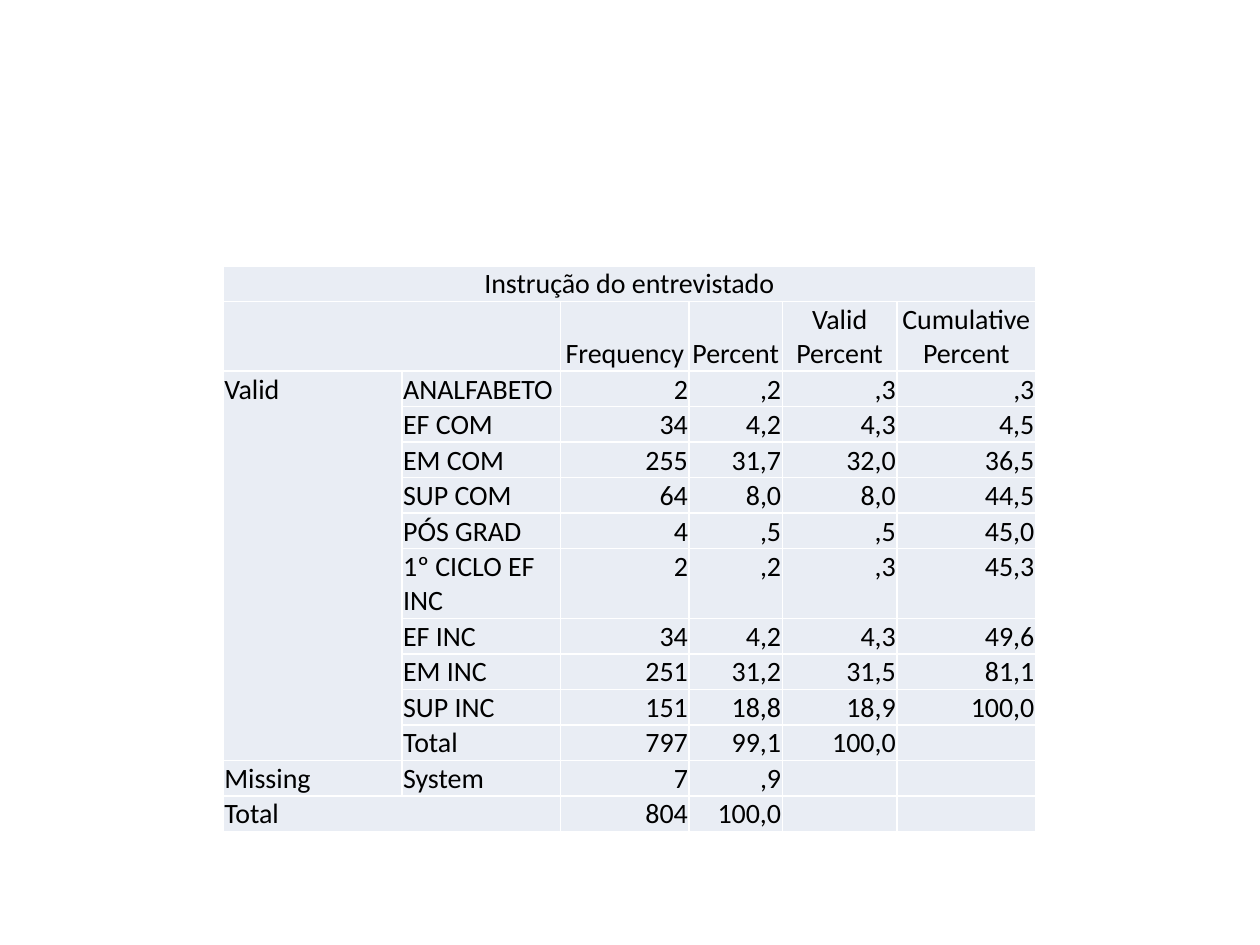
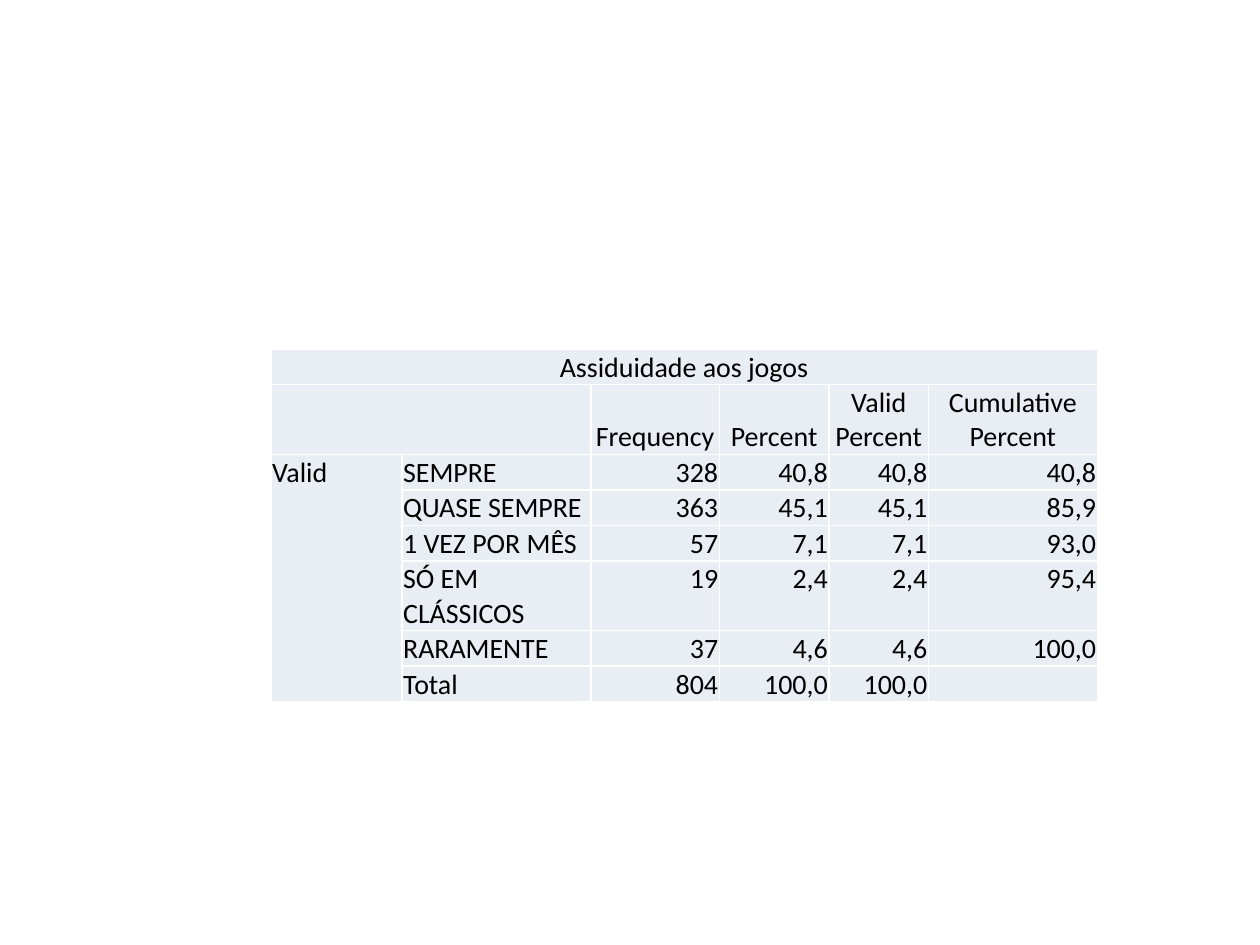
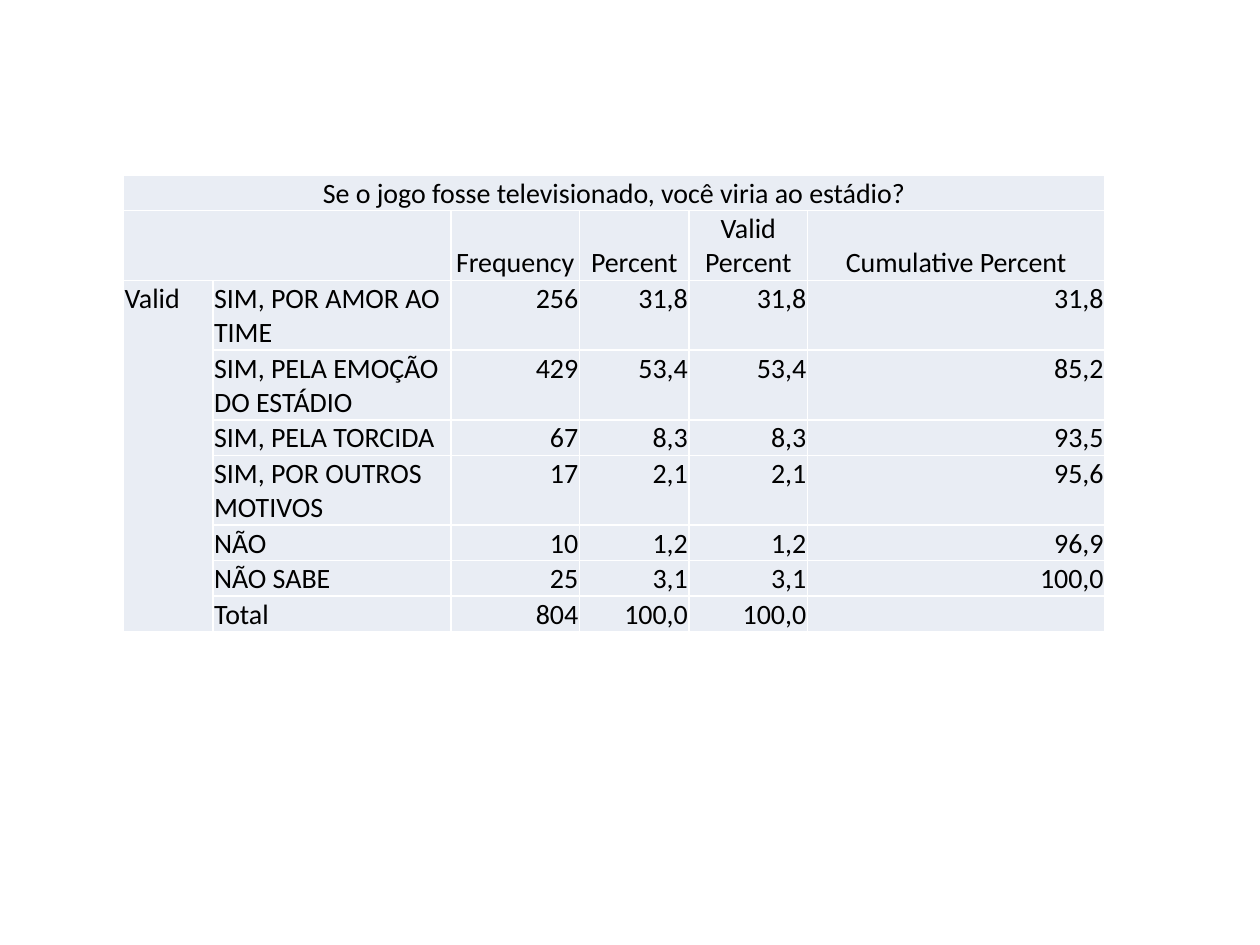
from pptx import Presentation
from pptx.dml.color import RGBColor as RGB
from pptx.enum.text import MSO_ANCHOR as Anchor, PP_ALIGN as Align
from pptx.oxml.xmlchemy import OxmlElement as Element
from pptx.util import Inches, Pt

COLORS = {"cell": "E9EDF4", "text": "000000", "border": "FFFFFF"}
FONT = "Calibri"
TEXT_SIZE = Pt(16)
INSET = Inches(0.01)
TITLE_HEIGHT, HEADER_HEIGHT, ROW_HEIGHT, TALL_HEIGHT = 0.25, 0.38, 0.22, 0.35
HEADERS = ("Frequency", "Percent", "Valid Percent", "Cumulative Percent")

# Each group holds rows of label, frequency, percent, valid and cumulative percent
EDUCATION = {
    "Valid": [
        ("ANALFABETO", "2", ",2", ",3", ",3"),
        ("EF COM", "34", "4,2", "4,3", "4,5"),
        ("EM COM", "255", "31,7", "32,0", "36,5"),
        ("SUP COM", "64", "8,0", "8,0", "44,5"),
        ("PÓS GRAD", "4", ",5", ",5", "45,0"),
        ("1º CICLO EF INC", "2", ",2", ",3", "45,3"),
        ("EF INC", "34", "4,2", "4,3", "49,6"),
        ("EM INC", "251", "31,2", "31,5", "81,1"),
        ("SUP INC", "151", "18,8", "18,9", "100,0"),
        ("Total", "797", "99,1", "100,0", ""),
    ],
    "Missing": [("System", "7", ",9", "", "")],
    "Total": [("", "804", "100,0", "", "")],
}
ATTENDANCE = {
    "Valid": [
        ("SEMPRE", "328", "40,8", "40,8", "40,8"),
        ("QUASE SEMPRE", "363", "45,1", "45,1", "85,9"),
        ("1 VEZ POR MÊS", "57", "7,1", "7,1", "93,0"),
        ("SÓ EM CLÁSSICOS", "19", "2,4", "2,4", "95,4"),
        ("RARAMENTE", "37", "4,6", "4,6", "100,0"),
        ("Total", "804", "100,0", "100,0", ""),
    ],
}
TELEVISED = {
    "Valid": [
        ("SIM, POR AMOR AO TIME", "256", "31,8", "31,8", "31,8"),
        ("SIM, PELA EMOÇÃO DO ESTÁDIO", "429", "53,4", "53,4", "85,2"),
        ("SIM, PELA TORCIDA", "67", "8,3", "8,3", "93,5"),
        ("SIM, POR OUTROS MOTIVOS", "17", "2,1", "2,1", "95,6"),
        ("NÃO", "10", "1,2", "1,2", "96,9"),
        ("NÃO SABE", "25", "3,1", "3,1", "100,0"),
        ("Total", "804", "100,0", "100,0", ""),
    ],
}


def add_borders(cell):
    properties = cell._tc.get_or_add_tcPr()
    for side in ("a:lnL", "a:lnR", "a:lnT", "a:lnB"):
        line = Element(side)
        line.set("w", str(Pt(1)))
        fill = Element("a:solidFill")
        color = Element("a:srgbClr")
        color.set("val", COLORS["border"])
        fill.append(color)
        line.append(fill)
        properties.append(line)


def style_cell(cell):
    add_borders(cell)
    cell.fill.solid()
    cell.fill.fore_color.rgb = RGB.from_string(COLORS["cell"])
    cell.margin_left = cell.margin_right = cell.margin_top = INSET
    cell.margin_bottom = 0
    # Empty cells need the text size too, or they stretch their row
    end = Element("a:endParaRPr")
    end.set("sz", str(int(TEXT_SIZE.pt * 100)))
    cell.text_frame.paragraphs[0]._p.append(end)


def write(cell, text, align=Align.LEFT, anchor=Anchor.TOP):
    cell.vertical_anchor = anchor
    if not text:
        return
    paragraph = cell.text_frame.paragraphs[0]
    paragraph.alignment = align
    run = paragraph.add_run()
    run.text = text
    run.font.name = FONT
    run.font.size = TEXT_SIZE
    run.font.color.rgb = RGB.from_string(COLORS["text"])


def fill_group(table, first, name, rows):
    """Write one group of rows and return the index of the row after it."""
    last = first + len(rows) - 1
    write(table.cell(first, 0), name)
    for index, (label, *values) in enumerate(rows, first):
        write(table.cell(index, 1), label)
        for column, value in enumerate(values, 2):
            write(table.cell(index, column), value, Align.RIGHT)
    spans_label = not rows[0][0]
    if last > first or spans_label:
        table.cell(first, 0).merge(table.cell(last, int(spans_label)))
    return last + 1


def add_frequency_table(slide, title, groups, box, widths, tall_rows=()):
    row_count = 2 + sum(len(rows) for rows in groups.values())
    frame = slide.shapes.add_table(row_count, len(widths), *map(Inches, box))
    table = frame.table
    table.first_row = table.horz_banding = False

    # Grid
    for column, width in zip(table.columns, widths):
        column.width = Inches(width)
    heights = [TITLE_HEIGHT, HEADER_HEIGHT] + [ROW_HEIGHT] * (row_count - 2)
    for index in tall_rows:
        heights[index] = TALL_HEIGHT
    for row, height in zip(table.rows, heights):
        row.height = Inches(height)
    frame.height = Inches(box[3])
    for cell in table.iter_cells():
        style_cell(cell)

    # Title and column headings
    table.cell(0, 0).merge(table.cell(0, len(widths) - 1))
    write(table.cell(0, 0), title, Align.CENTER, Anchor.MIDDLE)
    table.cell(1, 0).merge(table.cell(1, 1))
    for column, header in enumerate(HEADERS, 2):
        write(table.cell(1, column), header, Align.CENTER, Anchor.BOTTOM)

    # Body
    next_row = 2
    for name, rows in groups.items():
        next_row = fill_group(table, next_row, name, rows)


def main():
    deck = Presentation()
    deck.slide_width, deck.slide_height = Inches(10), Inches(7.5)
    blank = deck.slide_layouts[6]

    add_frequency_table(
        deck.slides.add_slide(blank), "Instrução do entrevistado", EDUCATION,
        (1.77, 2.11, 6.46, 4.41), (1.42, 1.26, 1.02, 0.74, 0.91, 1.1))
    add_frequency_table(
        deck.slides.add_slide(blank), "Assiduidade aos jogos", ATTENDANCE,
        (2.15, 2.77, 6.56, 2.75), (1.04, 1.5, 1.02, 0.87, 0.79, 1.34))
    add_frequency_table(
        deck.slides.add_slide(blank),
        "Se o jogo fosse televisionado, você viria ao estádio?", TELEVISED,
        (0.98, 1.39, 7.8, 3.56), (0.71, 1.89, 1.02, 0.87, 0.94, 2.36),
        tall_rows=(3, 5))

    deck.save("out.pptx")


if __name__ == "__main__":
    main()
